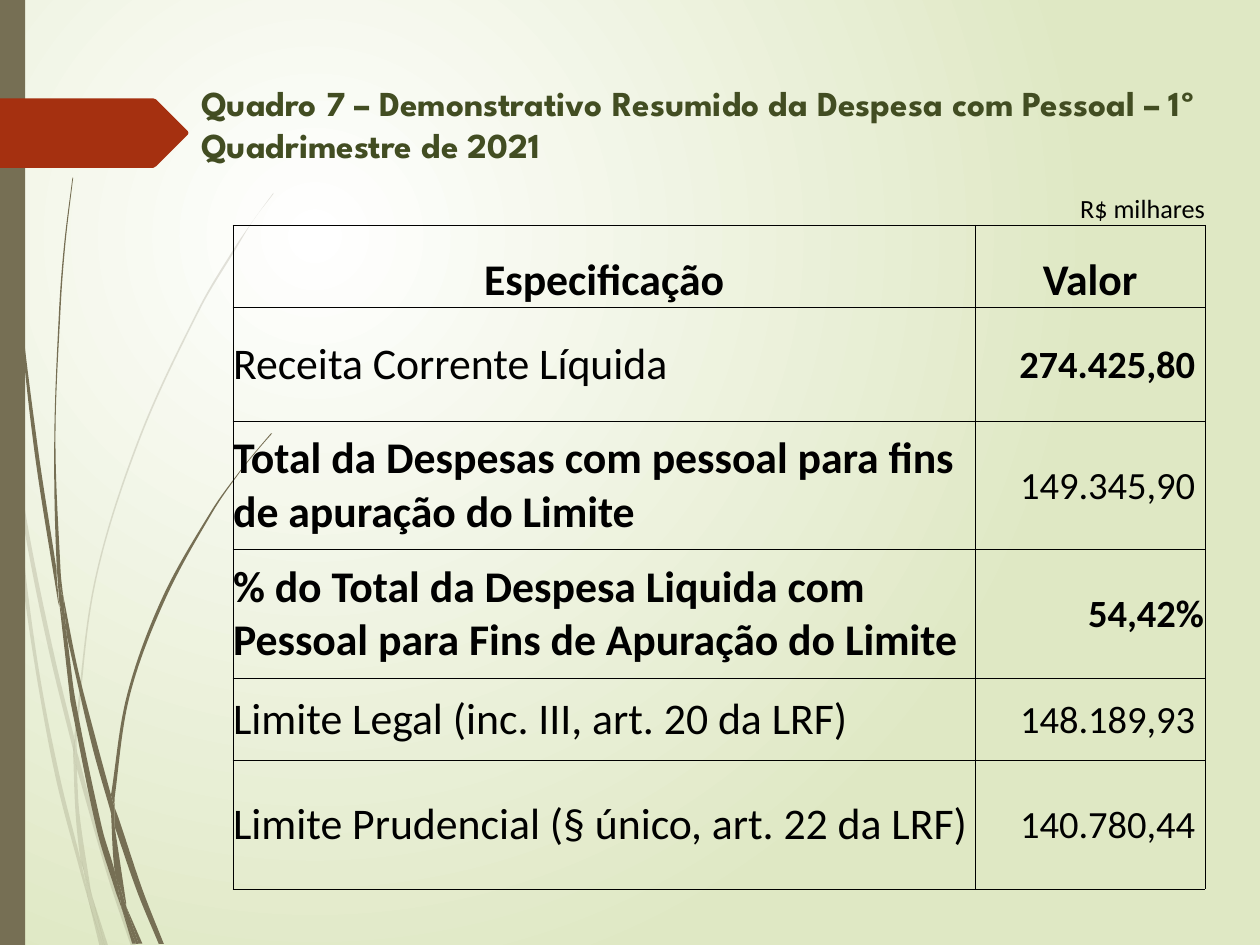
import math

from lxml import etree
from pptx import Presentation
from pptx.dml.color import RGBColor
from pptx.enum import shapes, text
from pptx.oxml import ns
from pptx.util import Pt

OLIVE, RED, BLACK = "766F54", "A53010", "000000"
LEFT, CENTER, RIGHT = text.PP_ALIGN.LEFT, text.PP_ALIGN.CENTER, text.PP_ALIGN.RIGHT
MIDDLE, BOTTOM = text.MSO_ANCHOR.MIDDLE, text.MSO_ANCHOR.BOTTOM

PALE_BLADES = [
    ([(5.8, 252), (4.3, 231.8), (0, 203)], [(0, 215.3), (5, 247.7)]),
    ([(7.2, 248.4), (18, 312.2), (31, 374.4), (42.5, 421.9)],
     [(42.5, 431.3), (28.8, 375.8), (17.9, 324), (8.6, 270.7), (7.2, 255.6)]),
    ([(43.9, 429.1), (46.1, 437), (54.4, 467.9), (63.4, 498.2), (77.8, 540.7)],
     [(74.9, 540.7), (61.2, 499.7), (43.9, 439.2)]),
    ([(52.6, 511.9), (61.9, 540.7)], [(59.8, 540.7)]),
    ([(5.8, 252), (8.6, 270.7), (15.8, 337.7), (23.8, 392.2), (34.6, 445.7),
      (46.1, 491.8), (49.7, 509), (50.4, 514.1)],
     [(46.1, 499), (32.4, 447.1), (22, 393), (13.7, 338.4), (8.9, 295.2)]),
    ([(41.8, 431.3), (43.2, 465.1), (46.1, 491.8), (48.2, 498.2), (52.6, 511.9)],
     [(51.8, 508.3), (45.4, 465.1), (43.9, 439.2)]),
    ([(43.9, 429.1), (43.9, 420.5), (54.7, 332.6), (79.9, 251.3), (114.5, 176.4),
      (134.6, 142.6), (144.7, 126), (156.2, 110.9)],
     [(156.2, 110.2), (144.7, 126), (133.9, 141.8), (113.8, 175.7), (79.2, 250.6),
      (54, 331.9), (42.5, 420.5)]),
    ([(50.4, 514.1), (59, 540.7)], [(56.9, 540.7)]),
    ([(43.9, 439.2), (43.9, 429.1)], [(42.5, 421.9), (41.8, 431.3)]),
    ([(46.8, 491.8), (49.7, 509), (50.4, 514.1), (59, 540.7)],
     [(59.8, 540.7), (52.6, 511.9), (48.2, 498.2)]),
]
DARK_BLADES = [
    ([(1.4, 0), (2.2, 34.6), (3.6, 79.2), (10.1, 167.8), (19.4, 255.6),
      (33.1, 343.4), (33.8, 346.3)],
     [(32.4, 329), (32.4, 326.2), (21.6, 255.6), (10.8, 167), (4.3, 78.5),
      (2.9, 34.6), (2.2, 0)]),
    ([(36, 339.8), (44.6, 382.9), (55.4, 424.8), (63.4, 454.3)],
     [(63.4, 464.4), (52.6, 426.2), (38.2, 363.6)]),
    ([(65.5, 461.5), (67.7, 467.3), (81.4, 508.3), (93.6, 539.3)],
     [(90.7, 539.3), (78.5, 509.8), (65.5, 472.3)]),
    ([(33.8, 343.4), (38.2, 363.6), (43.2, 400.3), (58.3, 473), (65.5, 497.5),
      (69.1, 516.2), (69.8, 519.8)],
     [(66.2, 509.8), (55.4, 474.5), (40.3, 401)]),
    ([(36, 339.8), (34.6, 326.2), (31.7, 251.3), (34.6, 176.4), (37.4, 139), (41.8, 101.5)],
     [(41.4, 101.5), (36.7, 139), (33.8, 176.4), (31, 251.3), (32.4, 323.3), (35.3, 339.8)]),
    ([(72, 517.7), (81.4, 539.3)], [(79.2, 539.3)]),
    ([(33.8, 343.4), (38.2, 363.6)], [(36, 339.8), (35.3, 339.8), (32.4, 323.3)]),
    ([(65.5, 461.5), (65.5, 455.8), (74.2, 397.4), (94.3, 342.7), (121.7, 292.3),
      (137.5, 269.3), (146.2, 258.5), (155.5, 247.7)],
     [(154.8, 247.7), (146.2, 257.8), (137.5, 268.6), (121, 291.6), (92.9, 341.3),
      (72.7, 396.7), (63.4, 454.3)]),
    ([(69.8, 519.8), (75.6, 539.3)], [(77.8, 539.3)]),
    ([(63.4, 464.4), (65.5, 497.5), (69.1, 508.3), (72, 517.7)],
     [(72, 515.5), (65.5, 472.3), (64.8, 468.7)]),
    ([(63.4, 464.4), (65.5, 472.3)], [(65.5, 461.5), (63.4, 454.3)]),
    ([(65.5, 497.5), (69.1, 516.2), (69.8, 519.8), (77.8, 539.3)],
     [(79.2, 539.3), (72, 517.7), (69.1, 508.3)]),
]
ARROW = [(0, 56.2), (87.5, 56.2), (89.3, 56.9), (107.3, 74.9), (107.7, 76),
         (107.3, 77), (89.3, 95), (87.5, 96), (0, 96)]

EXPENSES = [
    ("Receita Corrente Líquida", False, "274.425,80 ", True),
    ("Total da Despesas com pessoal para fins de apuração do Limite", True,
     "149.345,90 ", False),
    ("% do Total da Despesa Liquida com Pessoal para Fins de Apuração do Limite", True,
     "54,42%", True),
    ("Limite Legal (inc. III, art. 20 da LRF)", False, "148.189,93 ", False),
    ("Limite Prudencial (§ único, art. 22 da LRF)", False, "140.780,44 ", False),
]
COLUMN_WIDTHS = [166, 92.8, 92.8, 72.5, 131.4]
ROW_HEIGHTS = [46, 46.9, 65.1, 73.4, 73.5, 46.9, 73.5]


def color(value):
    return RGBColor.from_string(value)


def paint(shape, fill, opacity=100):
    shape.shadow.inherit = False
    shape.fill.solid()
    shape.fill.fore_color.rgb = color(fill)
    shape.line.fill.background()
    if opacity < 100:
        tint = shape.fill._xPr.find(".//" + ns.qn("a:srgbClr"))
        etree.SubElement(tint, ns.qn("a:alpha"), val=str(opacity * 1000))


def add_outline(slide, points, fill, opacity=100):
    corners = [(Pt(x), Pt(y)) for x, y in points]
    builder = slide.shapes.build_freeform(*corners[0], scale=1.0)
    builder.add_line_segments(corners[1:], close=True)
    outline = builder.convert_to_shape()
    paint(outline, fill, opacity)
    return outline


def handle(start, before, after, length):
    dx, dy = after[0] - before[0], after[1] - before[1]
    reach = length / 3 / (math.hypot(dx, dy) or 1)
    return start[0] + dx * reach, start[1] + dy * reach


def bend_edge(steps, edge):
    padded = [edge[0], *edge, edge[-1]]
    for step, a, b, c, d in zip(steps, padded, padded[1:], padded[2:], padded[3:]):
        length = math.dist(b, c)
        curve = etree.Element(ns.qn("a:cubicBezTo"))
        for x, y in (handle(b, a, c, length), handle(c, d, b, length), c):
            etree.SubElement(curve, ns.qn("a:pt"), x=str(round(x)), y=str(round(y)))
        step.getparent().replace(step, curve)


def add_blade(slide, outward, back, opacity):
    blade = add_outline(slide, outward + back, OLIVE, opacity)
    steps = list(blade._element.find(".//" + ns.qn("a:path")))[:-1]
    spots = [(int(step[0].get("x")), int(step[0].get("y"))) for step in steps]
    turn = len(outward)
    bend_edge(steps[1:turn], spots[:turn])
    bend_edge(steps[turn + 1:], spots[turn:])


def write(frame, content, size, font="Calibri", ink=BLACK, bold=False, align=LEFT):
    frame.word_wrap = True
    paragraph = frame.paragraphs[0]
    paragraph.alignment = align
    run = paragraph.add_run()
    run.text = content
    run.font.size, run.font.name, run.font.bold = Pt(size), font, bold
    run.font.color.rgb = color(ink)


def set_borders(cell, visible):
    props = cell._tc.get_or_add_tcPr()
    for index, side in enumerate("LRTB"):
        edge = etree.Element(ns.qn("a:ln" + side), w=str(Pt(0.5)))
        if side in visible:
            ink = etree.SubElement(edge, ns.qn("a:solidFill"))
            etree.SubElement(ink, ns.qn("a:srgbClr"), val=BLACK)
        else:
            etree.SubElement(edge, ns.qn("a:noFill"))
        props.insert(index, edge)


def fill_cell(cell, content, size, anchor=MIDDLE, inset=0, **style):
    cell.vertical_anchor = anchor
    cell.margin_left = cell.margin_right = cell.margin_top = Pt(inset)
    cell.margin_bottom = 0
    write(cell.text_frame, content, size, **style)


def paint_background(slide):
    fill = slide.background.fill
    fill.gradient()
    for stop, tone in zip(fill.gradient_stops, ("FFFFFF", "DFE8C4")):
        stop.color.rgb = color(tone)
    gradient = slide._element.find(".//" + ns.qn("a:gradFill"))
    linear = gradient.find(ns.qn("a:lin"))
    circle = etree.Element(ns.qn("a:path"), {"path": "circle"})
    etree.SubElement(circle, ns.qn("a:fillToRect"),
                     l="50000", t="50000", r="100000", b="100000")
    gradient.replace(linear, circle)


def add_decoration(slide):
    for blades, opacity in ((PALE_BLADES, 20), (DARK_BLADES, 100)):
        for outward, back in blades:
            add_blade(slide, outward, back, opacity)
    bar = slide.shapes.add_shape(shapes.MSO_SHAPE.RECTANGLE, 0, 0, Pt(14.4), Pt(540))
    paint(bar, OLIVE)
    add_outline(slide, ARROW, RED)


def add_expense_table(slide):
    table = slide.shapes.add_table(len(ROW_HEIGHTS), len(COLUMN_WIDTHS), Pt(133.2), Pt(82.8),
                                   Pt(sum(COLUMN_WIDTHS)), Pt(sum(ROW_HEIGHTS))).table
    table.first_row = table.horz_banding = False
    for column, width in zip(table.columns, COLUMN_WIDTHS):
        column.width = Pt(width)
    for index, (row, height) in enumerate(zip(table.rows, ROW_HEIGHTS)):
        row.height = Pt(height)
        for cell in row.cells:
            cell.fill.background()
            set_borders(cell, "LRTB" if index else "B")
        if index:
            row.cells[0].merge(row.cells[3])
    fill_cell(table.cell(0, 4), "R$ milhares", 15, BOTTOM, align=RIGHT)
    for column, heading in ((0, "Especificação"), (4, "Valor")):
        fill_cell(table.cell(1, column), heading, 25, BOTTOM, bold=True, align=CENTER)
    for row, (item, item_bold, amount, amount_bold) in enumerate(EXPENSES, 2):
        fill_cell(table.cell(row, 0), item, 25, bold=item_bold)
        fill_cell(table.cell(row, 4), amount, 22, inset=0.7, bold=amount_bold, align=RIGHT)


def main():
    deck = Presentation()
    deck.slide_width, deck.slide_height = Pt(720), Pt(540)
    slide = deck.slides.add_slide(deck.slide_layouts[6])
    paint_background(slide)
    add_decoration(slide)
    title = slide.shapes.add_textbox(Pt(108), Pt(43.2), Pt(612), Pt(48.2))
    write(title.text_frame,
          "Quadro 7 – Demonstrativo Resumido da Despesa com Pessoal – 1º Quadrimestre de 2021",
          20, font="League Spartan", ink="424D22", bold=True)
    add_expense_table(slide)
    deck.save("out.pptx")


if __name__ == "__main__":
    main()
